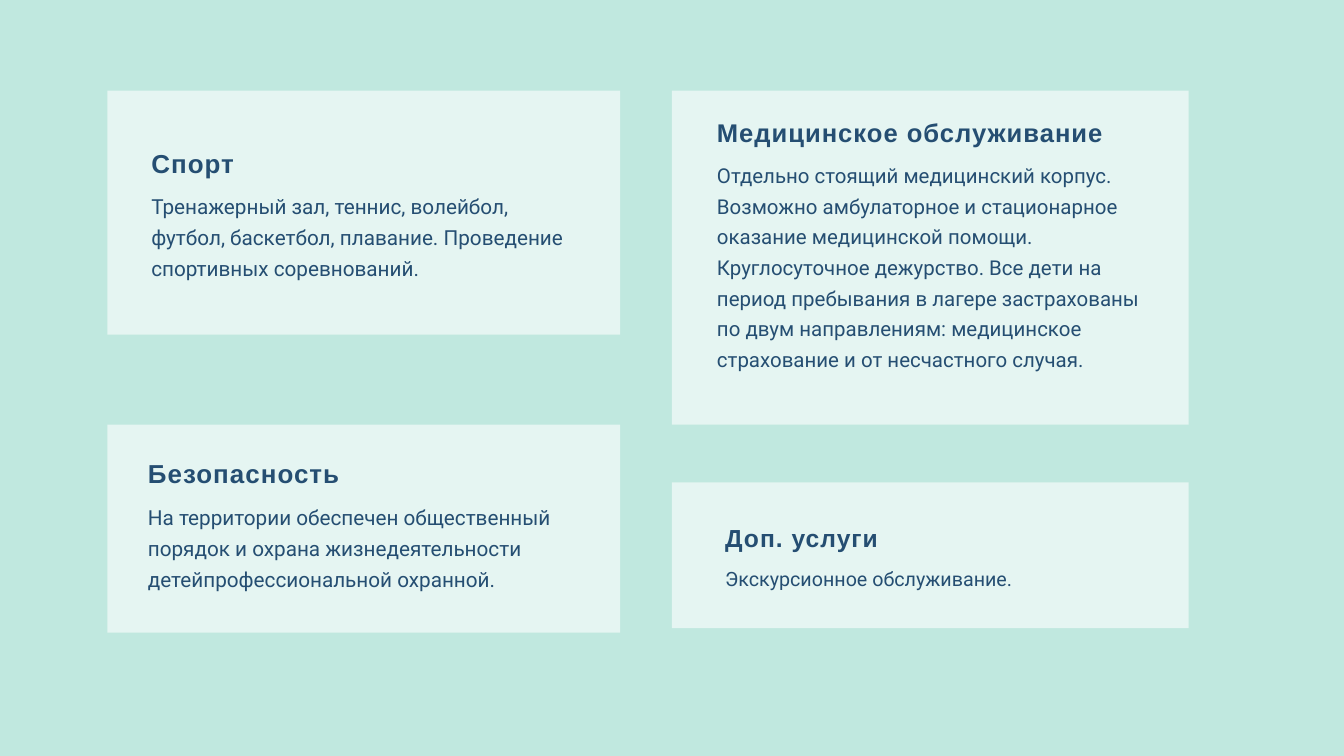
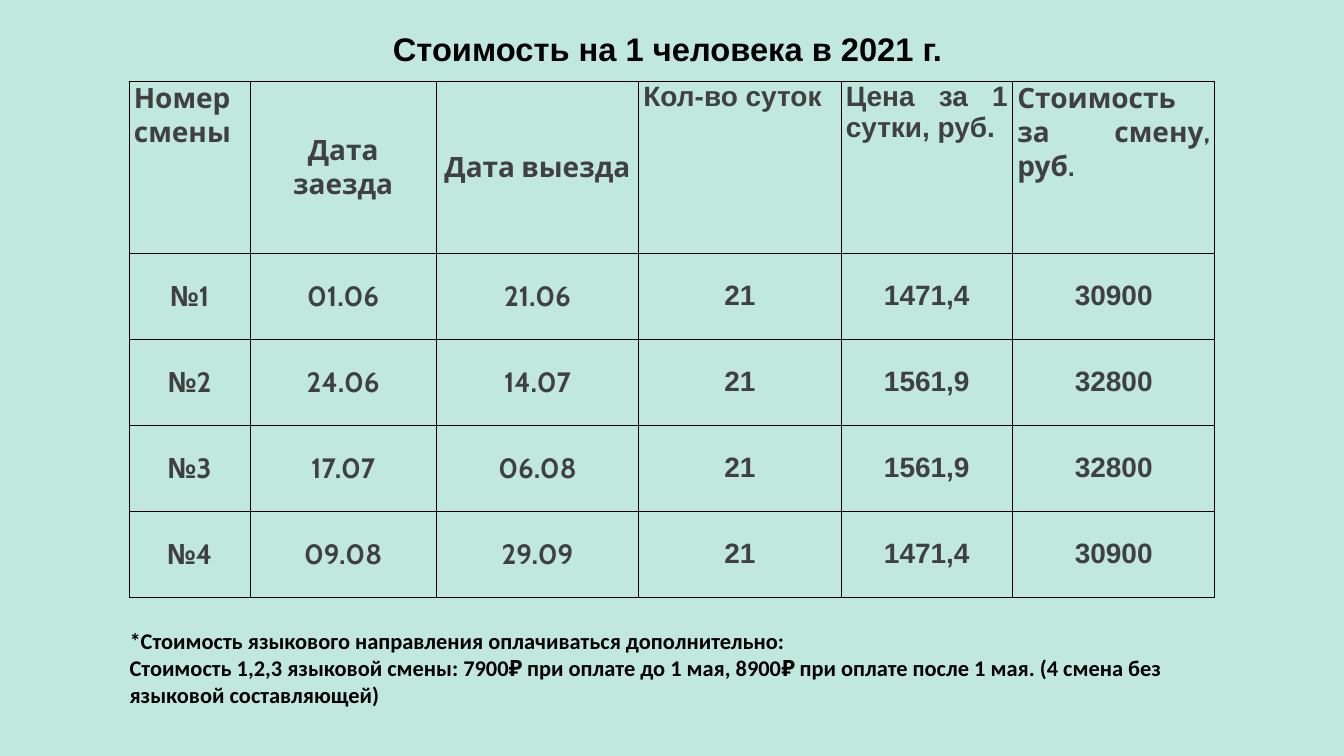
import pptx
import pptx.util
import pptx.dml.color
import pptx.enum.shapes
import pptx.enum.text
import pptx.oxml
import pptx.oxml.ns
from lxml import etree

Cm, Pt = pptx.util.Cm, pptx.util.Pt
RGBColor = pptx.dml.color.RGBColor
ALIGN = pptx.enum.text.PP_ALIGN
ANCHOR = pptx.enum.text.MSO_ANCHOR

# Shared colours and text formats
MINT = RGBColor(0xC0, 0xE8, 0xDF)
WHITE = RGBColor(0xFE, 0xFF, 0xFF)
NAVY = RGBColor(0x25, 0x4E, 0x72)
GREY = RGBColor(0x40, 0x40, 0x40)
BLACK = RGBColor(0, 0, 0)

CARD_TITLE = {"name": "Arial", "bold": True}
CARD_BODY = {"name": "Roboto", "bold": False}
PRICE_TITLE = {"name": "Arial", "size": Pt(35), "bold": True}
FOOTNOTE = {"name": "Calibri", "size": Pt(24), "bold": True}
CELL = {"size": Pt(30), "bold": True}
NO_MARGINS = {f"margin_{side}": 0 for side in ("left", "top", "right", "bottom")}
CELL_MARGINS = {**NO_MARGINS, "margin_left": Cm(0.18), "margin_right": Cm(0.18)}

# Card: left, top, width, height; text left, top, width; body height; title size
CARDS = [
    ((4.06, 16.05, 19.38, 7.87), (5.59, 17.3, 16.33), 3.43, 27.8, "Безопасность",
     "На территории обеспечен общественный порядок и охрана жизнедеятельности "
     "детейпрофессиональной охранной."),
    ((4.06, 3.43, 19.38, 9.22), (5.72, 5.56, 16.33), 3.43, 27.8, "Спорт",
     "Тренажерный зал, теннис, волейбол, футбол, баскетбол, плавание. "
     "Проведение спортивных соревнований."),
    ((25.4, 18.24, 19.53, 5.51), (27.41, 19.76, 15.52), 1.02, 26.4, "Доп. услуги",
     "Экскурсионное обслуживание."),
    ((25.4, 3.43, 19.53, 12.62), (27.1, 4.42, 16.13), 9.17, 27.4,
     "Медицинское обслуживание",
     "Отдельно стоящий медицинский корпус. Возможно амбулаторное и стационарное "
     "оказание медицинской помощи. Круглосуточное дежурство. Все дети на период "
     "пребывания в лагере застрахованы по двум направлениям: медицинское "
     "страхование и от несчастного случая."),
]

HEADERS = ["Номер смены", "Дата заезда", "Дата выезда", "Кол-во суток",
           "Цена за 1 сутки, руб.", "Стоимость за смену, руб."]
SHIFTS = [
    ["№1", "01.06", "21.06", "21", "1471,4", "30900"],
    ["№2", "24.06", "14.07", "21", "1561,9", "32800"],
    ["№3", "17.07", "06.08", "21", "1561,9", "32800"],
    ["№4", "09.08", "29.09", "21", "1471,4", "30900"],
]
COLUMN_WIDTHS = [4.57, 7.04, 7.65, 7.65, 6.48, 7.65]
HEADER_HEIGHT, ROW_HEIGHT = 6.5, 3.25


def apply(target, formats):
    for name, value in formats.items():
        setattr(target, name, value)


def add_run(p, text, color, formats):
    r = p.add_run()
    r.text = text
    apply(r.font, formats)
    r.font.color.rgb = color
    return r


def add_slide(prs):
    s = prs.slides.add_slide(prs.slide_layouts[6])
    s.background.fill.solid()
    s.background.fill.fore_color.rgb = MINT
    return s


def add_text(s, box, lines, color, formats, wrap=True, margins=None, paragraph=None):
    tf = s.shapes.add_textbox(*map(Cm, box)).text_frame
    apply(tf, {"word_wrap": wrap, **(margins or {})})
    for i, line in enumerate(lines):
        p = tf.add_paragraph() if i else tf.paragraphs[0]
        apply(p, paragraph or {})
        add_run(p, line, color, formats)
    return tf


def add_panel(s, box):
    sp = s.shapes.add_shape(pptx.enum.shapes.MSO_SHAPE.RECTANGLE, *map(Cm, box))
    sp.shadow.inherit = False
    sp.line.fill.background()
    sp.fill.solid()
    sp.fill.fore_color.rgb = WHITE
    color = sp.fill._xPr.find(".//" + pptx.oxml.ns.qn("a:srgbClr"))
    etree.SubElement(color, pptx.oxml.ns.qn("a:alpha"), val="60000")


def add_card_text(s, place, body_height, size, title, body):
    left, top, width = place
    leading = Pt(round(size * 1.2, 1))
    shared = {"margins": NO_MARGINS, "paragraph": {"line_spacing": leading}}
    tf = add_text(s, (left, top, width, leading.cm), [title], NAVY,
                  {**CARD_TITLE, "size": Pt(size)}, **shared)
    tf.paragraphs[0].runs[0].font._element.set("spc", "110")
    add_text(s, (left, top + 1.3 * leading.cm, width, body_height), [body], NAVY,
             {**CARD_BODY, "size": Pt(round(size * 0.8, 1))}, **shared)


def set_borders(cell):
    tcPr = cell._tc.get_or_add_tcPr()
    for i, side in enumerate("LRTB"):
        tcPr.insert(i, pptx.oxml.parse_xml(
            f'<a:ln{side} {pptx.oxml.ns.nsdecls("a")} w="12700"><a:solidFill>'
            f'<a:srgbClr val="{BLACK}"/></a:solidFill></a:ln{side}>'))


def add_price_table(s, left, top):
    rows = [HEADERS] + SHIFTS
    heights = [HEADER_HEIGHT] + [ROW_HEIGHT] * len(SHIFTS)
    table = s.shapes.add_table(len(rows), len(HEADERS), Cm(left), Cm(top),
                               Cm(sum(COLUMN_WIDTHS)), Cm(sum(heights))).table
    apply(table, {"first_row": False, "horz_banding": False})
    for column, width in zip(table.columns, COLUMN_WIDTHS):
        column.width = Cm(width)
    for i, (row, height) in enumerate(zip(rows, heights)):
        table.rows[i].height = Cm(height)
        for j, text in enumerate(row):
            cell = table.cell(i, j)
            is_date = j in (1, 2)
            justified = i == 0 and not is_date
            apply(cell, {**CELL_MARGINS, "vertical_anchor":
                         ANCHOR.TOP if justified else ANCHOR.MIDDLE})
            cell.fill.background()
            set_borders(cell)
            p = cell.text_frame.paragraphs[0]
            p.alignment = ALIGN.JUSTIFY if justified else ALIGN.CENTER
            if justified or j > 2:
                p.space_before = Pt(6)
            cabin = j < 3 or (i == 0 and j == 5)
            add_run(p, text, GREY, {**CELL, "name": "Cabin" if cabin else "Arial"})


def build_services(prs):
    s = add_slide(prs)
    for panel, *_ in CARDS:
        add_panel(s, panel)
    for _, *content in CARDS:
        add_card_text(s, *content)


def build_prices(prs):
    s = add_slide(prs)
    add_price_table(s, 4.88, 3.07)
    tf = add_text(s, (14.6, 0.97, 21.49, 1.75), ["Стоимость на 1 человека в 2021 г."],
                  BLACK, PRICE_TITLE, wrap=False, paragraph={"alignment": ALIGN.JUSTIFY})
    tf.vertical_anchor = ANCHOR.MIDDLE
    add_text(s, (4.65, 23.6, 41.48, 3.33), [
        "*Стоимость языкового направления оплачиваться дополнительно:",
        "Стоимость 1,2,3 языковой смены: 7900₽ при оплате до 1 мая, 8900₽ при оплате "
        "после 1 мая. (4 смена без языковой составляющей)"], BLACK, FOOTNOTE)


def main():
    prs = pptx.Presentation()
    apply(prs, {"slide_width": Cm(50.8), "slide_height": Cm(28.58)})
    build_services(prs)
    build_prices(prs)
    prs.save("out.pptx")


if __name__ == "__main__":
    main()
